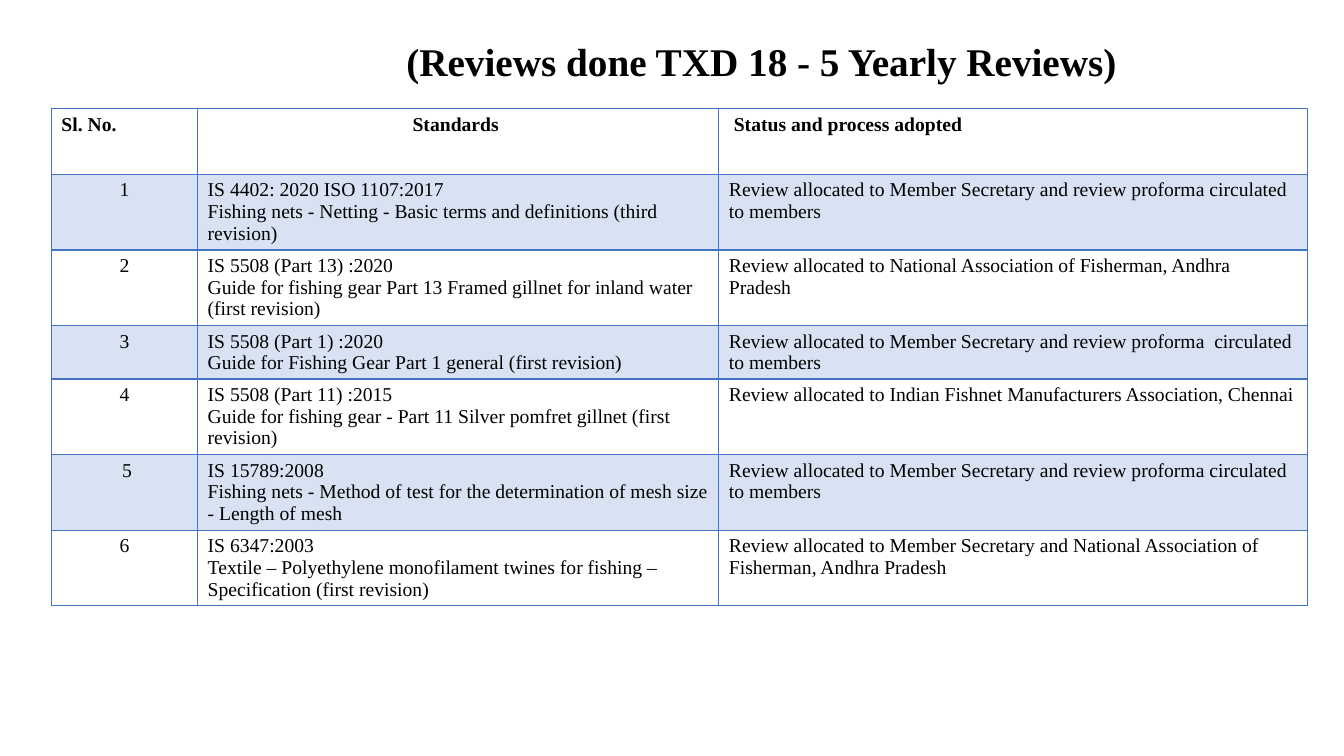
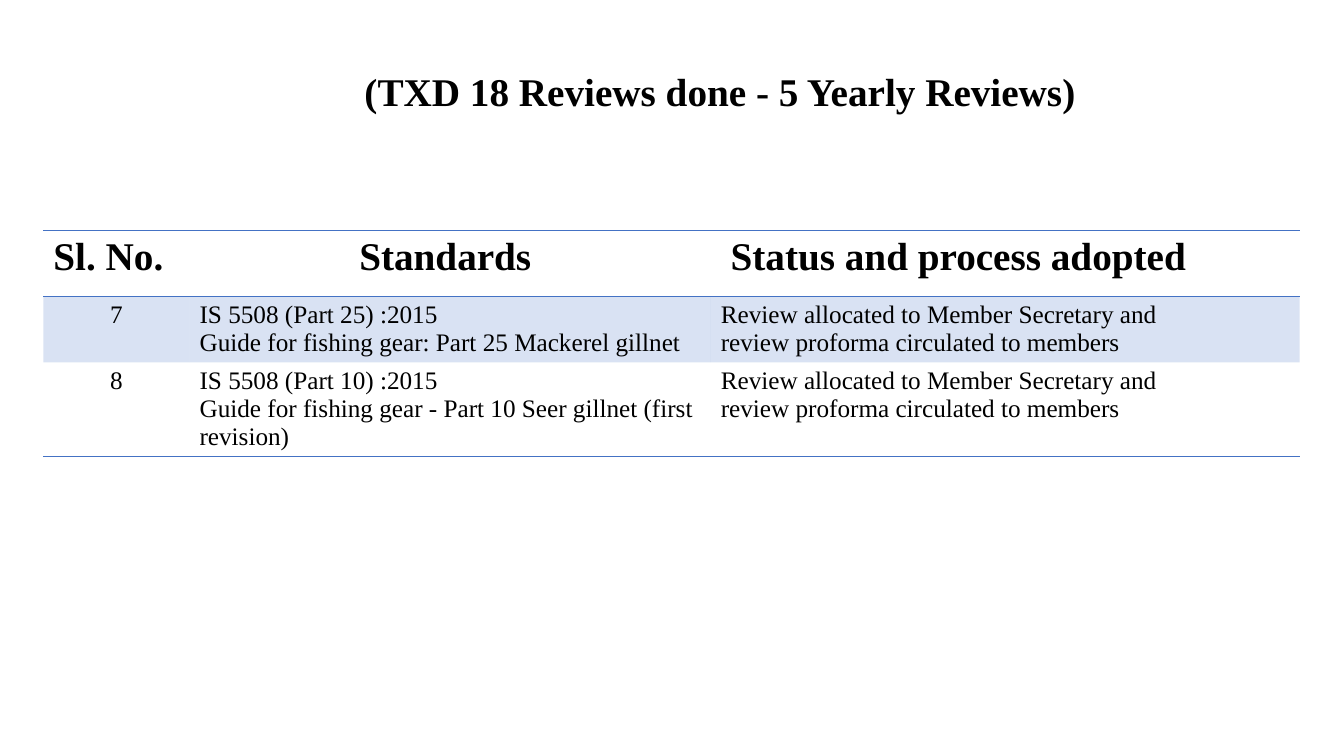
from dataclasses import dataclass

from lxml import etree
from pptx import Presentation
from pptx.dml.color import RGBColor
from pptx.enum.text import MSO_ANCHOR, PP_ALIGN
from pptx.oxml.ns import qn
from pptx.util import Inches, Pt

LEFT, CENTER = PP_ALIGN.LEFT, PP_ALIGN.CENTER
MIDDLE = MSO_ANCHOR.MIDDLE
TITLE_ONLY = 5
PLAIN_TABLE = "{2D5ABB26-0587-4C30-8999-92F81FD0307C}"


@dataclass(frozen=True)
class Theme:
    font: str = "Times New Roman"
    text: str = "000000"
    accent: str = "4472C4"
    band_opacity: int = 20
    border: float = 1
    title_size: int = 28
    small: int = 14
    medium: int = 18


THEME = Theme()
HEADERS = ["Sl. No.", "Standards ", " Status and process adopted"]
COLUMN_WIDTHS = [1.45, 5.17, 5.84]
HEADER_ALIGNS = [LEFT, CENTER, LEFT]
BODY_ALIGNS = [CENTER, LEFT, LEFT]
HEADER_HEIGHT = 0.65
TO_MEMBERS = "Review allocated to Member Secretary and review proforma circulated to members"
TO_MEMBERS_SPLIT = "Review allocated to Member Secretary and\nreview proforma circulated to members"

# Each row: height, then the text of its three cells
FIRST_REVIEWS = [
    (0.75, "1", "IS 4402: 2020 ISO 1107:2017\nFishing nets - Netting - Basic terms and "
     "definitions (third revision)", TO_MEMBERS),
    (0.75, "2", "IS 5508 (Part 13) :2020\nGuide for fishing gear Part 13 Framed gillnet "
     "for inland water (first revision)",
     "Review allocated to National Association of Fisherman, Andhra Pradesh"),
    (0.53, "3", "IS 5508 (Part 1) :2020\nGuide for Fishing Gear Part 1 general (first revision)",
     "Review allocated to Member Secretary and review proforma  circulated to members"),
    (0.75, "4", "IS 5508 (Part 11) :2015\nGuide for fishing gear - Part 11 Silver pomfret "
     "gillnet (first revision)",
     "Review allocated to Indian Fishnet Manufacturers Association, Chennai"),
    (0.75, " 5", "IS 15789:2008\nFishing nets - Method of test for the determination of "
     "mesh size - Length of mesh", TO_MEMBERS),
    (0.75, "6", "IS 6347:2003\nTextile – Polyethylene monofilament twines for fishing – "
     "Specification (first revision)",
     "Review allocated to Member Secretary and National Association of Fisherman, "
     "Andhra Pradesh"),
]
LAST_REVIEWS = [
    (0.65, "7", "IS 5508 (Part 25) :2015\nGuide for fishing gear: Part 25 Mackerel gillnet",
     TO_MEMBERS_SPLIT),
    (0.93, "8", "IS 5508 (Part 10) :2015\nGuide for fishing gear - Part 10 Seer gillnet "
     "(first revision)", TO_MEMBERS_SPLIT),
]


class Deck:
    def __init__(self, theme):
        self.theme = theme
        self.prs = Presentation()
        self.prs.slide_width, self.prs.slide_height = Inches(13.33), Inches(7.5)
        self.slide = None

    def add_slide(self):
        self.slide = self.prs.slides.add_slide(self.prs.slide_layouts[TITLE_ONLY])

    def style_paragraph(self, p, size, bold, align):
        p.alignment = align
        font = p.font
        formats = {"name": self.theme.font, "size": Pt(size), "bold": bold}
        for target in (font, *(r.font for r in p.runs)):
            for name, value in formats.items():
                setattr(target, name, value)
            target.color.rgb = RGBColor.from_string(self.theme.text)

    def title(self, text, left, top, width, align, indent=0.1):
        sp = self.slide.shapes.title
        box = {"left": left, "top": top, "width": width, "height": 1.08}
        for name, value in box.items():
            setattr(sp, name, Inches(value))
        tf = sp.text_frame
        tf.text = text
        tf.vertical_anchor = MIDDLE
        tf.margin_left = Inches(indent)
        p = tf.paragraphs[0]
        p.line_spacing = 0.9
        self.style_paragraph(p, self.theme.title_size, True, align)

    def border(self, cell, sides):
        """Draw the given sides, named in the order L, R, T, B."""
        tc_pr = cell._tc.get_or_add_tcPr()
        for side in sides:
            ln = etree.SubElement(tc_pr, qn(f"a:ln{side}"), w=str(Pt(self.theme.border)))
            fill = etree.SubElement(ln, qn("a:solidFill"))
            etree.SubElement(fill, qn("a:srgbClr"), val=self.theme.accent)

    def fill_cell(self, cell, banded):
        if not banded:
            cell.fill.background()
            return
        cell.fill.solid()
        cell.fill.fore_color.rgb = RGBColor.from_string(self.theme.accent)
        color = cell._tc.tcPr.find(qn("a:solidFill")).find(qn("a:srgbClr"))
        etree.SubElement(color, qn("a:alpha"), val=str(self.theme.band_opacity * 1000))

    def review_table(self, left, top, reviews, header_size, body_size, grid):
        """Add a table with a full grid, or with rules at header and foot only."""
        rows = [(HEADER_HEIGHT, *HEADERS), *reviews]
        frame = self.slide.shapes.add_table(
            len(rows), len(HEADERS), Inches(left), Inches(top),
            Inches(sum(COLUMN_WIDTHS)), Inches(sum(row[0] for row in rows)))
        table = frame.table
        table._tbl.tblPr.find(qn("a:tableStyleId")).text = PLAIN_TABLE
        for column, width in zip(table.columns, COLUMN_WIDTHS):
            column.width = Inches(width)
        for i, (height, *texts) in enumerate(rows):
            table.rows[i].height = Inches(height)
            header = i == 0
            size = header_size if header else body_size
            aligns = HEADER_ALIGNS if header else BODY_ALIGNS
            if grid:
                sides = "LRTB"
            else:
                sides = "TB" if header else "B" if i == len(rows) - 1 else ""
            for j, (text, align) in enumerate(zip(texts, aligns)):
                cell = table.cell(i, j)
                cell.text = text
                for p in cell.text_frame.paragraphs:
                    self.style_paragraph(p, size, header, align)
                self.border(cell, sides)
                self.fill_cell(cell, banded=i % 2 == 1)


def main():
    deck = Deck(THEME)

    deck.add_slide()
    deck.title("(Reviews done TXD 18 - 5 Yearly Reviews)", 0.73, 0.09, 12.46, LEFT, indent=3.3)
    deck.review_table(0.51, 1.08, FIRST_REVIEWS, THEME.small, THEME.small, grid=True)

    deck.add_slide()
    deck.title("(TXD 18 Reviews done - 5 Yearly Reviews)", 0.95, 0.39, 12.38, CENTER)
    deck.review_table(0.43, 2.29, LAST_REVIEWS, THEME.title_size, THEME.medium, grid=False)

    deck.prs.save("out.pptx")


if __name__ == "__main__":
    main()
